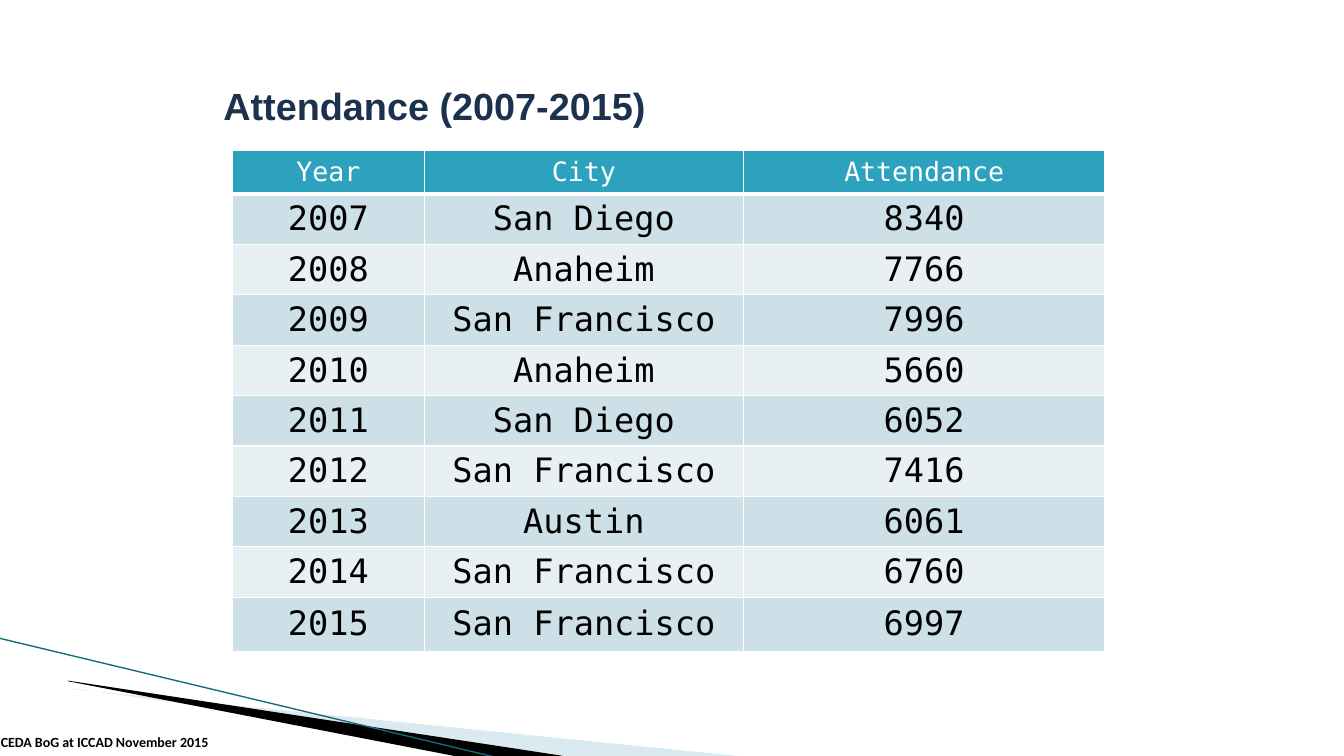
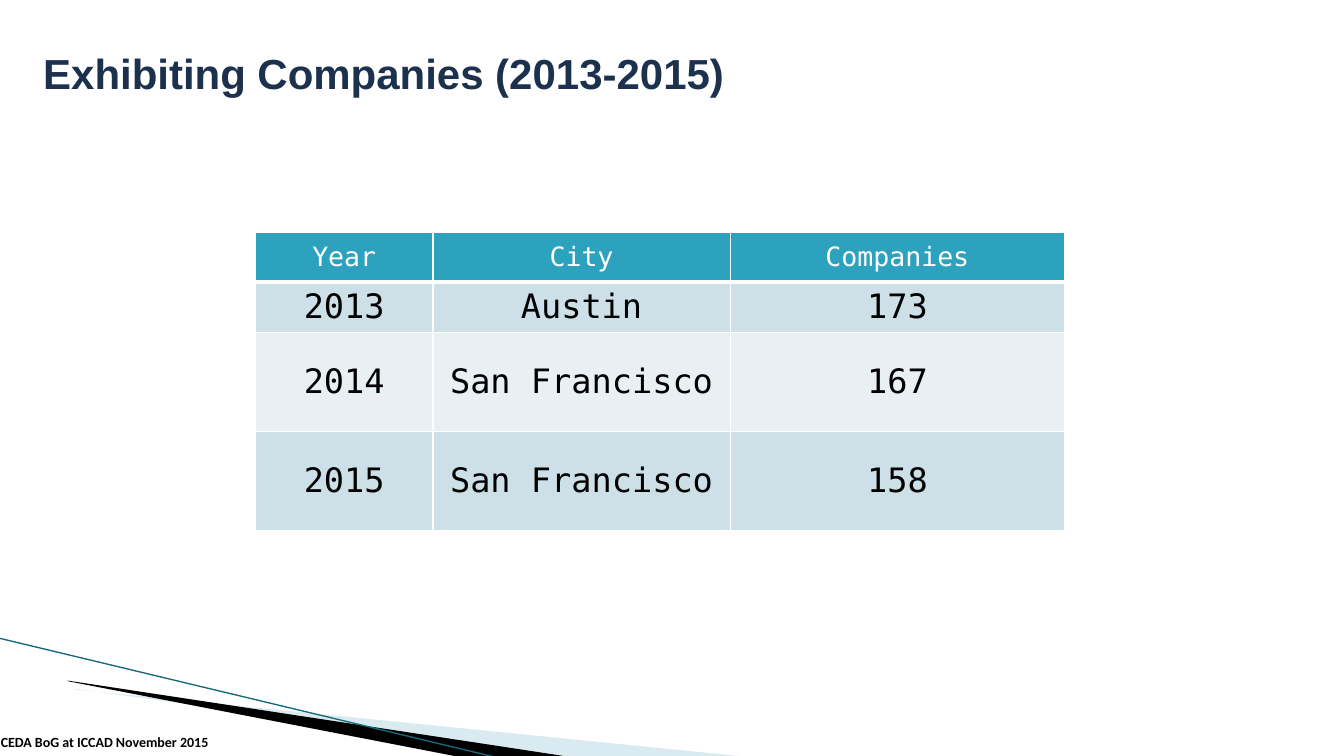
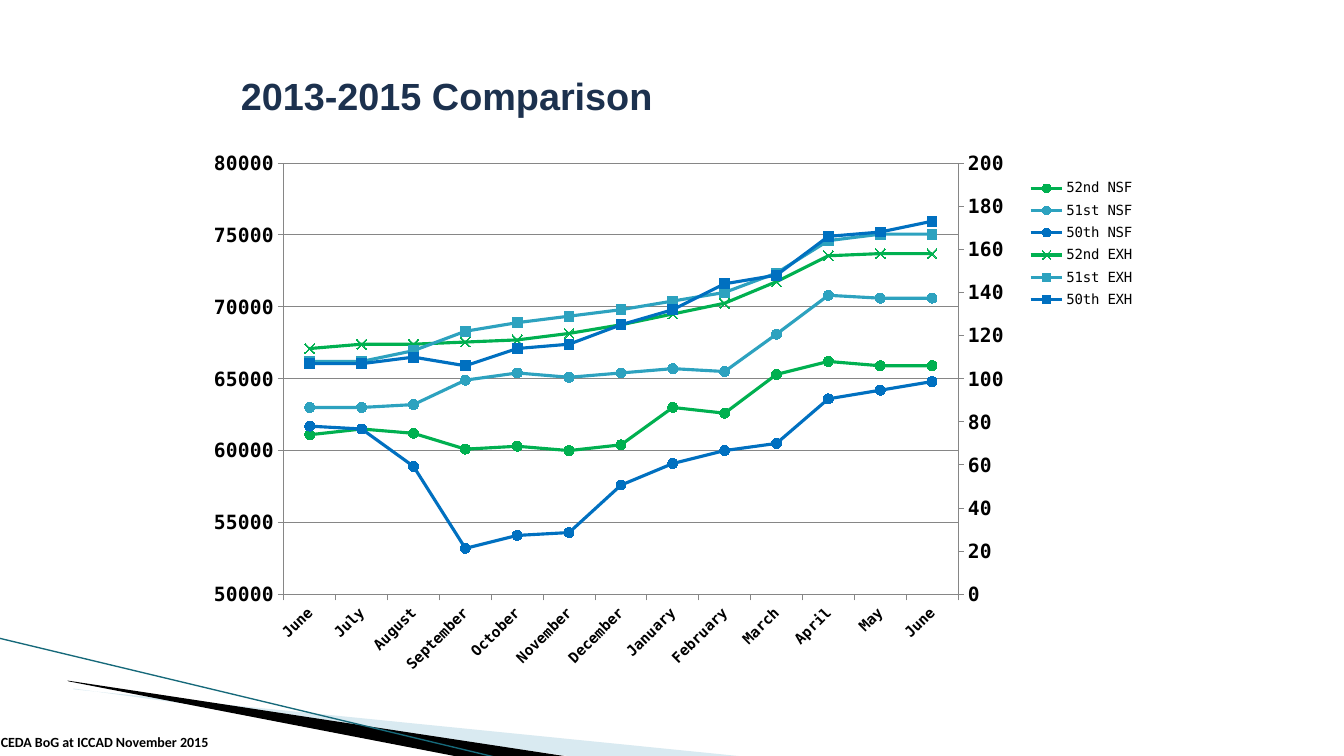
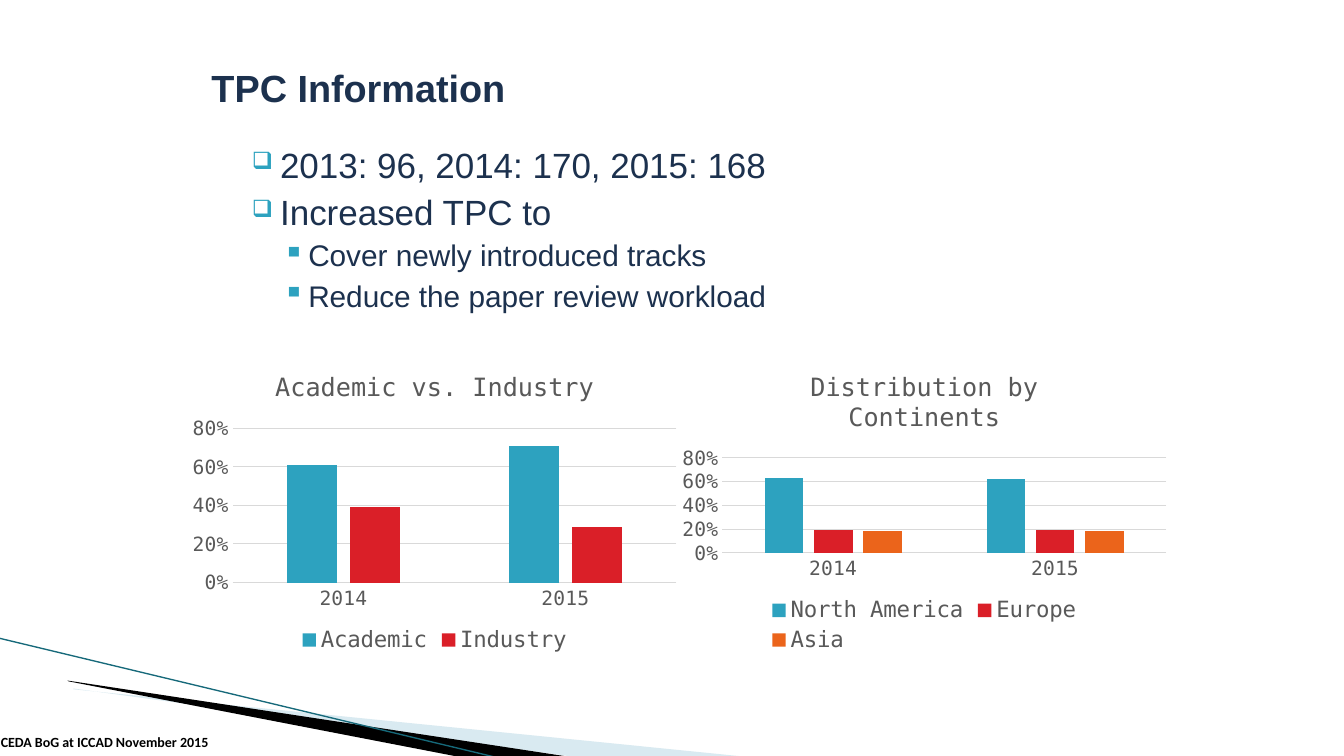
from copy import deepcopy

from lxml import etree
from pptx import Presentation
from pptx.chart.data import CategoryChartData
from pptx.dml.color import RGBColor
from pptx.enum.chart import (XL_CHART_TYPE, XL_LEGEND_POSITION,
                             XL_MARKER_STYLE, XL_TICK_MARK)
from pptx.enum.shapes import MSO_CONNECTOR
from pptx.enum.text import MSO_ANCHOR, PP_ALIGN
from pptx.oxml import parse_xml
from pptx.oxml.ns import nsdecls, qn
from pptx.util import Cm, Pt

LINE_MARKERS, COLUMNS = XL_CHART_TYPE.LINE_MARKERS, XL_CHART_TYPE.COLUMN_CLUSTERED
LEGEND_RIGHT, LEGEND_BOTTOM = XL_LEGEND_POSITION.RIGHT, XL_LEGEND_POSITION.BOTTOM
CIRCLE, SQUARE, CROSS = XL_MARKER_STYLE.CIRCLE, XL_MARKER_STYLE.SQUARE, XL_MARKER_STYLE.X
TICK_OUT, TICK_NONE = XL_TICK_MARK.OUTSIDE, XL_TICK_MARK.NONE
STRAIGHT = MSO_CONNECTOR.STRAIGHT
MIDDLE, BOTTOM, CENTER = MSO_ANCHOR.MIDDLE, MSO_ANCHOR.BOTTOM, PP_ALIGN.CENTER


class Theme:
    # Colours
    navy = RGBColor.from_string("1C314E")
    teal = RGBColor.from_string("2DA2BF")
    dark_teal = RGBColor.from_string("16697A")
    pale_blue = RGBColor.from_string("A0CBDC")
    band_odd = RGBColor.from_string("CDE0E8")
    band_even = RGBColor.from_string("E8F0F4")
    green = RGBColor.from_string("00B050")
    blue = RGBColor.from_string("0070C0")
    red = RGBColor.from_string("DA1F28")
    orange = RGBColor.from_string("EB641B")
    black = RGBColor.from_string("000000")
    white = RGBColor.from_string("FFFFFF")
    grey = RGBColor.from_string("595959")
    axis = RGBColor.from_string("868686")
    grid = RGBColor.from_string("D9D9D9")
    # Fonts
    sans, footer_font, mono = "Arial", "Calibri", "DejaVu Sans Mono"
    # Type sizes
    title, title_large, footer = 27, 30, 10
    header, cell = 19, 24
    bullet, sub_bullet = 25, 21.3
    legend, months, axis_text, legend_large, chart_title = 10, 10.5, 14, 16, 18


def set_font(font, size, color, name, bold=False):
    font.size, font.name, font.bold = Pt(size), name, bold
    font.color.rgb = color


def new_slide(title, left, top, width, height, size=Theme.title):
    s = prs.slides.add_slide(prs.slide_layouts[6])

    # Corner wedges and line
    for color, alpha, (start, *points) in WEDGES:
        builder = s.shapes.build_freeform(Cm(start[0]), Cm(start[1]))
        builder.add_line_segments([(Cm(x), Cm(y)) for x, y in points])
        sp = builder.convert_to_shape()
        sp.shadow.inherit = False
        sp.fill.solid()
        sp.fill.fore_color.rgb = color
        sp.line.fill.background()
        for clr in sp.element.spPr.iter(qn("a:srgbClr")):
            etree.SubElement(clr, qn("a:alpha"), val=str(alpha * 1000))
    sp = s.shapes.add_connector(STRAIGHT, Cm(-0.03), Cm(16.08), Cm(12.57), Cm(19.1))
    sp.line.color.rgb = Theme.dark_teal
    sp.line.width = Pt(0.95)
    etree.SubElement(sp.element.spPr, qn("a:effectLst"))

    # Title and footer
    for text, box, anchor, style in (
            (title, (left, top, width, height), MIDDLE,
             (size, Theme.navy, Theme.sans, True)),
            ("CEDA BoG at ICCAD November 2015", (-0.23, 18.42, 8.71, 0.61), BOTTOM,
             (Theme.footer, Theme.black, Theme.footer_font, True))):
        tf = s.shapes.add_textbox(*map(Cm, box)).text_frame
        tf.word_wrap = True
        tf.vertical_anchor = anchor
        tf.text = text
        set_font(tf.paragraphs[0].runs[0].font, *style)
    return s


WEDGES = [
    (Theme.pale_blue, 40, [(1.85, 17.37), (18.9, 19.08), (14.53, 19.08), (1.85, 17.35)]),
    (Theme.black, 100, [(1.7, 17.15), (14.4, 19.08), (11.71, 19.1), (1.73, 17.17)]),
]

prs = Presentation()
prs.slide_width, prs.slide_height = Cm(33.87), Cm(19.05)

# Slides 1 and 2: tables
attendance = [
    ("Year", "City", "Attendance"),
    ("2007", "San Diego", "8340"),
    ("2008", "Anaheim", "7766"),
    ("2009", "San Francisco", "7996"),
    ("2010", "Anaheim", "5660"),
    ("2011", "San Diego", "6052"),
    ("2012", "San Francisco", "7416"),
    ("2013", "Austin", "6061"),
    ("2014", "San Francisco", "6760"),
    ("2015", "San Francisco", "6997"),
]
companies = [
    ("Year", "City", "Companies"),
    ("2013", "Austin", "173"),
    ("2014", "San Francisco", "167"),
    ("2015", "San Francisco", "158"),
]
table_slides = [
    (("Attendance (2007-2015)", 5.38, 1.96, 22.91, 1.4), attendance,
     (5.86, 3.8), (4.83, 8.05, 9.1), [1.09] + [1.27] * 8 + [1.36]),
    (("Exhibiting Companies (2013-2015)", 0.84, 0.64, 26.24, 2.41, Theme.title_large),
     companies, (6.44, 5.85), (4.47, 7.49, 8.43), [1.25, 1.28, 2.49, 2.49]),
]
for heading, rows, (left, top), widths, heights in table_slides:
    s = new_slide(*heading)
    table = s.shapes.add_table(len(rows), len(widths), Cm(left), Cm(top),
                               Cm(sum(widths)), Cm(sum(heights))).table
    table.first_row = table.horz_banding = False
    for column, width in zip(table.columns, widths):
        column.width = Cm(width)
    for i, (row, height) in enumerate(zip(rows, heights)):
        table.rows[i].height = Cm(height)
        if i == 0:
            fill, size, color = Theme.teal, Theme.header, Theme.white
        else:
            fill = Theme.band_odd if i % 2 else Theme.band_even
            size, color = Theme.cell, Theme.black
        for j, text in enumerate(row):
            cell = table.cell(i, j)
            cell.margin_left = cell.margin_right = Cm(0.03)
            cell.margin_top = cell.margin_bottom = Cm(0.03)
            cell.vertical_anchor = MIDDLE
            cell.fill.solid()
            cell.fill.fore_color.rgb = fill
            cell.text_frame.text = text
            p = cell.text_frame.paragraphs[0]
            p.alignment = CENTER
            set_font(p.runs[0].font, size, color, Theme.mono)
            tc_pr = cell._tc.get_or_add_tcPr()
            for k, side in enumerate("LRTB"):
                width = Pt(3 if i == 0 and side == "B" else 1)
                tc_pr.insert(k, parse_xml(
                    f'<a:ln{side} {nsdecls("a")} w="{width}"><a:solidFill>'
                    f'<a:srgbClr val="{Theme.white}"/></a:solidFill></a:ln{side}>'))

# Slide 3: line chart with two value axes
s = new_slide("2013-2015 Comparison", 5.82, 1.7, 22.91, 1.4)
line_series = [
    ("52nd NSF", Theme.green, CIRCLE, (61100, 61500, 61200, 60100, 60300, 60000, 60400,
                                       63000, 62600, 65300, 66200, 65900, 65900)),
    ("51st NSF", Theme.teal, CIRCLE, (63000, 63000, 63200, 64900, 65400, 65100, 65400,
                                      65700, 65500, 68100, 70800, 70600, 70600)),
    ("50th NSF", Theme.blue, CIRCLE, (61700, 61500, 58900, 53200, 54100, 54300, 57600,
                                      59100, 60000, 60500, 63600, 64200, 64800)),
    ("52nd EXH", Theme.green, CROSS, (114, 116, 116, 117, 118, 121, 125,
                                      130, 135, 145, 157, 158, 158)),
    ("51st EXH", Theme.teal, SQUARE, (108, 108, 113, 122, 126, 129, 132,
                                      136, 140, 149, 164, 167, 167)),
    ("50th EXH", Theme.blue, SQUARE, (107, 107, 110, 106, 114, 116, 125,
                                      132, 144, 148, 166, 168, 173)),
]
left_count = 3
data = CategoryChartData()
data.categories = ["June", "July", "August", "September", "October", "November", "December",
                   "January", "February", "March", "April", "May", "June"]
for name, color, marker, values in line_series:
    data.add_series(name, values)
chart = s.shapes.add_chart(LINE_MARKERS, Cm(5), Cm(3.43), Cm(23.93), Cm(13.59), data).chart
chart.has_title = False
set_font(chart.font, Theme.legend, Theme.black, Theme.mono)
chart.has_legend = True
chart.legend.position = LEGEND_RIGHT
chart.legend.include_in_layout = False
chart.plots[0].vary_by_categories = False
for series, (name, color, marker, values) in zip(chart.plots[0].series, line_series):
    series.smooth = False
    series.format.line.color.rgb = color
    series.format.line.width = Pt(2.25)
    series.marker.style = marker
    series.marker.size = 7
    series.marker.format.fill.solid()
    series.marker.format.fill.fore_color.rgb = color
    series.marker.format.line.color.rgb = color

months, values = chart.category_axis, chart.value_axis
for axis, size in ((months, Theme.months), (values, Theme.axis_text)):
    axis.major_tick_mark = TICK_OUT
    axis.minor_tick_mark = TICK_NONE
    axis.format.line.color.rgb = Theme.axis
    set_font(axis.tick_labels.font, size, Theme.black, Theme.mono, True)
values.minimum_scale, values.maximum_scale, values.major_unit = 50000, 80000, 5000
values.has_major_gridlines = True
values.major_gridlines.format.line.color.rgb = Theme.axis
values.tick_labels.number_format = "General"
values.tick_labels.number_format_is_linked = False

# Second plot on the right-hand axis
root = chart.element
root.xpath(".//c:catAx/c:txPr/a:bodyPr")[0].set("rot", "-2700000")
plot_area = root.xpath(".//c:plotArea")[0]
left_plot = plot_area.find(qn("c:lineChart"))
cat_ax, val_ax = plot_area.find(qn("c:catAx")), plot_area.find(qn("c:valAx"))
right_plot, right_cat, right_val = map(deepcopy, (left_plot, cat_ax, val_ax))
for ser in left_plot.findall(qn("c:ser"))[left_count:]:
    left_plot.remove(ser)
for ser in right_plot.findall(qn("c:ser"))[:left_count]:
    right_plot.remove(ser)
left_plot.addnext(right_plot)
val_ax.addnext(right_val)
right_val.addnext(right_cat)
cat_id, val_id = "50010", "50020"
for ax_id, value in zip(right_plot.findall(qn("c:axId")), (cat_id, val_id)):
    ax_id.set("val", value)
for axis, own, other in ((right_cat, cat_id, val_id), (right_val, val_id, cat_id)):
    axis.find(qn("c:axId")).set("val", own)
    axis.find(qn("c:crossAx")).set("val", other)
right_cat.find(qn("c:delete")).set("val", "1")
right_val.remove(right_val.find(qn("c:majorGridlines")))
for tag, value in (("axPos", "r"), ("crosses", "max"), ("majorUnit", "20"),
                   ("scaling/c:min", "0"), ("scaling/c:max", "200")):
    right_val.xpath(f"c:{tag}")[0].set("val", value)

# Fixed places for plot and legend
legend = root.xpath(".//c:legend")[0]
for parent, index, target, box in (
        (plot_area, 0, '<c:layoutTarget val="inner"/>', (0.09, 0.05, 0.71, 0.8)),
        (legend, 1, "", (0.87, 0.07, 0.12, 0.26))):
    for old in parent.findall(qn("c:layout")):
        parent.remove(old)
    modes = '<c:xMode val="edge"/><c:yMode val="edge"/>'
    sizes = "".join(f'<c:{tag} val="{value}"/>' for tag, value in zip("xywh", box))
    parent.insert(index, parse_xml(
        f'<c:layout {nsdecls("c")}><c:manualLayout>{target}{modes}{sizes}'
        '</c:manualLayout></c:layout>'))

# Slide 4: bullets
s = new_slide("TPC Information", 5.08, 1.5, 22.91, 1.4)
tf = s.shapes.add_textbox(Cm(5.79), Cm(3.48), Cm(22.81), Cm(4.17)).text_frame
tf.word_wrap = True
# Mark, mark size in percent, left margin, hanging indent, text size, space before
levels = [("❑", 68, 1.02, -0.71, Theme.bullet, 4),
          ("▪", 100, 1.73, -0.64, Theme.sub_bullet, 3.2)]
bullets = [
    (0, "2013: 96, 2014: 170, 2015: 168"),
    (0, "Increased TPC to"),
    (1, "Cover newly introduced tracks"),
    (1, "Reduce the paper review workload"),
]
for i, (level, text) in enumerate(bullets):
    mark, percent, margin, indent, size, before = levels[level]
    p = tf.add_paragraph() if i else tf.paragraphs[0]
    p.text = text
    p.level = level
    p_pr = p._p.get_or_add_pPr()
    p_pr.set("marL", str(Cm(margin)))
    p_pr.set("indent", str(Cm(indent)))
    bu_clr = etree.SubElement(p_pr, qn("a:buClr"))
    etree.SubElement(bu_clr, qn("a:srgbClr"), val=str(Theme.teal))
    etree.SubElement(p_pr, qn("a:buSzPct"), val=str(percent * 1000))
    etree.SubElement(p_pr, qn("a:buChar"), char=mark)
    if i:
        p.space_before = Pt(before)
    set_font(p.runs[0].font, size, Theme.navy, Theme.sans)

# Slide 4: column charts
column_charts = [
    ("Academic vs. Industry", 4.6,
     [("Academic", (0.61, 0.71)), ("Industry", (0.39, 0.29))]),
    ("Distribution by Continents", 16.94,
     [("North America", (0.63, 0.62)), ("Europe", (0.19, 0.19)), ("Asia", (0.18, 0.18))]),
]
for title, left, columns in column_charts:
    data = CategoryChartData()
    data.categories = ["2014", "2015"]
    for name, shares in columns:
        data.add_series(name, shares)
    chart = s.shapes.add_chart(COLUMNS, Cm(left), Cm(8.94), Cm(12.7), Cm(7.62), data).chart
    set_font(chart.font, Theme.legend, Theme.black, Theme.mono)
    chart.has_title = True
    tf = chart.chart_title.text_frame
    tf.text = title
    set_font(tf.paragraphs[0].runs[0].font, Theme.chart_title, Theme.grey, Theme.mono)
    chart.chart_title.include_in_layout = False
    chart.has_legend = True
    chart.legend.position = LEGEND_BOTTOM
    chart.legend.include_in_layout = False
    set_font(chart.legend.font, Theme.legend_large, Theme.grey, Theme.mono)

    plot = chart.plots[0]
    plot.vary_by_categories = False
    plot.gap_width, plot.overlap = 219, -27
    for series, color in zip(plot.series, (Theme.teal, Theme.red, Theme.orange)):
        series.format.fill.solid()
        series.format.fill.fore_color.rgb = color

    years, shares = chart.category_axis, chart.value_axis
    for axis in (years, shares):
        axis.major_tick_mark = axis.minor_tick_mark = TICK_NONE
        set_font(axis.tick_labels.font, Theme.axis_text, Theme.grey, Theme.mono)
    years.format.line.color.rgb = Theme.grid
    shares.format.line.fill.background()
    shares.major_gridlines.format.line.color.rgb = Theme.grid
    shares.minimum_scale, shares.maximum_scale, shares.major_unit = 0, 0.8, 0.2
    shares.tick_labels.number_format = "0%"
    shares.tick_labels.number_format_is_linked = False

prs.save("out.pptx")
